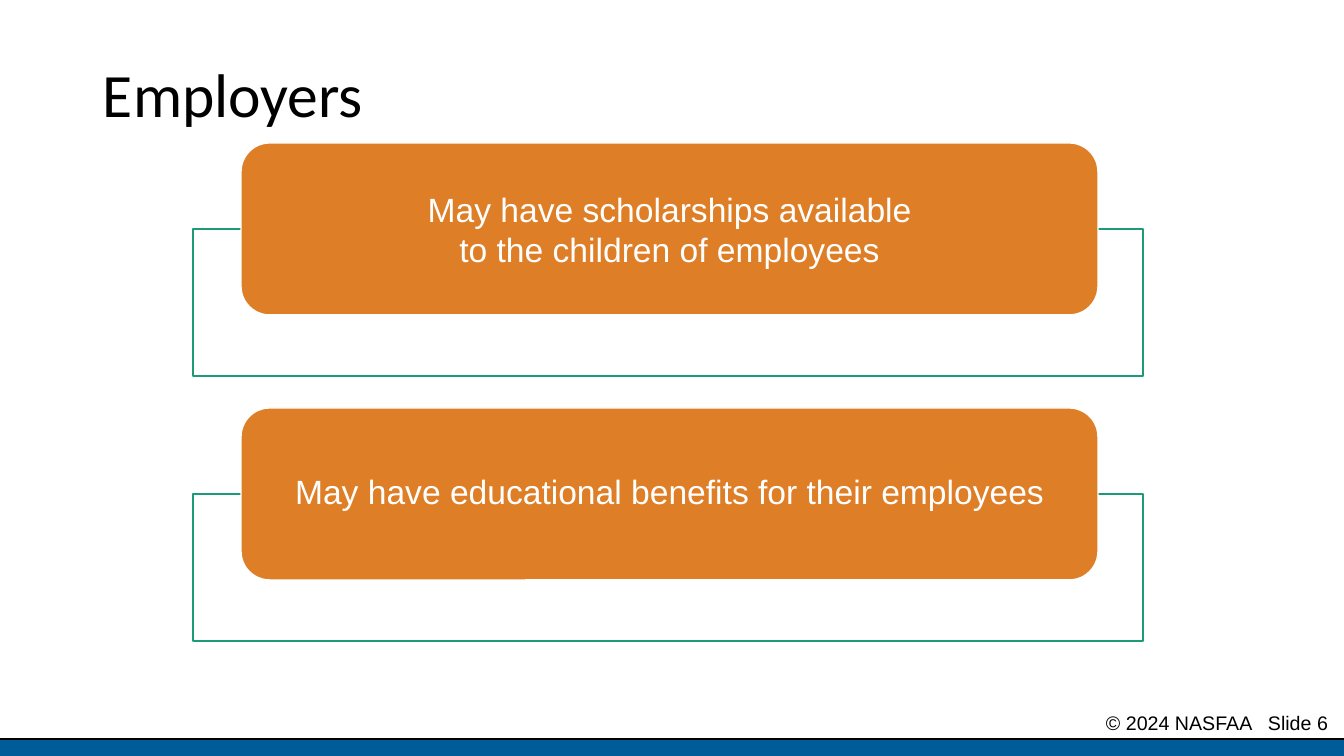
from lxml import etree
from pptx import Presentation
from pptx.dml.color import RGBColor
from pptx.enum.shapes import MSO_CONNECTOR, MSO_SHAPE
from pptx.enum.text import MSO_ANCHOR, PP_ALIGN
from pptx.oxml.ns import qn
from pptx.util import Pt

LINE = MSO_CONNECTOR.STRAIGHT
RECT, ROUND_RECT = MSO_SHAPE.RECTANGLE, MSO_SHAPE.ROUNDED_RECTANGLE
LEFT, CENTER = PP_ALIGN.LEFT, PP_ALIGN.CENTER
MIDDLE = MSO_ANCHOR.MIDDLE

BLACK = RGBColor(0x00, 0x00, 0x00)
WHITE = RGBColor(0xFF, 0xFF, 0xFF)
BLUE = RGBColor(0x00, 0x5B, 0x99)
GREEN = RGBColor(0x1D, 0x9A, 0x78)
ORANGE = RGBColor(0xDE, 0x7E, 0x26)

WIDTH, HEIGHT = 1344, 756
BENEFITS = [
    "May have scholarships available\vto the children of employees",
    "May have educational benefits for their employees",
]


def px(n):
    """Turn whole pixels into EMU."""
    return round(n * 914400 / 100.8)


def put_text(sp, text, size, color, font="Arial", align=LEFT, spacing=1.0, inset=0):
    """Write one formatted paragraph, centred vertically, into a shape."""
    tf = sp.text_frame
    tf.word_wrap = True
    tf.vertical_anchor = MIDDLE
    tf.margin_left = tf.margin_right = px(inset)
    tf.margin_top = tf.margin_bottom = 0
    p = tf.paragraphs[0]
    p.text = text
    p.alignment = align
    p.line_spacing = spacing
    for r in p.runs:
        r.font.name = font
        r.font.size = Pt(size)
        r.font.color.rgb = color
    return p


def add_box(s, kind, x, y, w, h, fill, line=None):
    """Add a filled preset shape with an optional thin outline."""
    sp = s.shapes.add_shape(kind, px(x), px(y), px(w), px(h))
    sp.shadow.inherit = False
    sp.fill.solid()
    sp.fill.fore_color.rgb = fill
    if line is None:
        sp.line.fill.background()
    else:
        sp.line.color.rgb = line
        sp.line.width = Pt(1)
    return sp


def add_title(s, x, y, w, h):
    """Place and fill the title placeholder."""
    title = s.shapes.title
    title.left, title.top, title.width, title.height = px(x), px(y), px(w), px(h)
    put_text(title, "Employers", 44, BLACK, "Calibri", spacing=0.9, inset=10)


def add_benefit(s, x, y, w, text, spacing):
    """Draw an orange card over a green frame."""
    frame = add_box(s, RECT, x, y + 86, w, 147, WHITE, GREEN)
    color = frame.fill._xPr.find(qn("a:solidFill"))[0]
    etree.SubElement(color, qn("a:alpha"), val="90000")
    card = add_box(s, ROUND_RECT, x + 48, y, w - 93, 172, ORANGE, WHITE)
    put_text(card, text, 24, WHITE, align=CENTER, spacing=spacing, inset=33)


def add_footer(s, y):
    """Draw the bottom bar, its rule and the copyright line above it."""
    add_box(s, RECT, 0, y, WIDTH, HEIGHT - y, BLUE)
    rule = s.shapes.add_connector(LINE, 0, px(y), px(WIDTH), px(y))
    rule.line.color.rgb = BLACK
    rule.line.width = Pt(1)
    etree.SubElement(rule._element.spPr, qn("a:effectLst"))
    sp = s.shapes.add_textbox(px(1106), px(y - 28), px(WIDTH - 1106), px(24))
    p = put_text(sp, "© 2024 NASFAA\tSlide 6", 14, BLACK)
    tabs = etree.SubElement(p._p.get_or_add_pPr(), qn("a:tabLst"))
    etree.SubElement(tabs, qn("a:tab"), pos=str(px(162)), algn="l")


def main():
    """Build the slide and save it."""
    prs = Presentation()
    prs.slide_width, prs.slide_height = px(WIDTH), px(HEIGHT)
    s = prs.slides.add_slide(prs.slide_layouts[5])
    add_footer(s, 739)
    add_title(s, 93, 25, 1159, 146)
    for i, text in enumerate(BENEFITS):
        add_benefit(s, 193, 143 + 265 * i, 950, text, 1.0 if "\v" in text else 0.9)
    prs.save("out.pptx")


if __name__ == "__main__":
    main()
